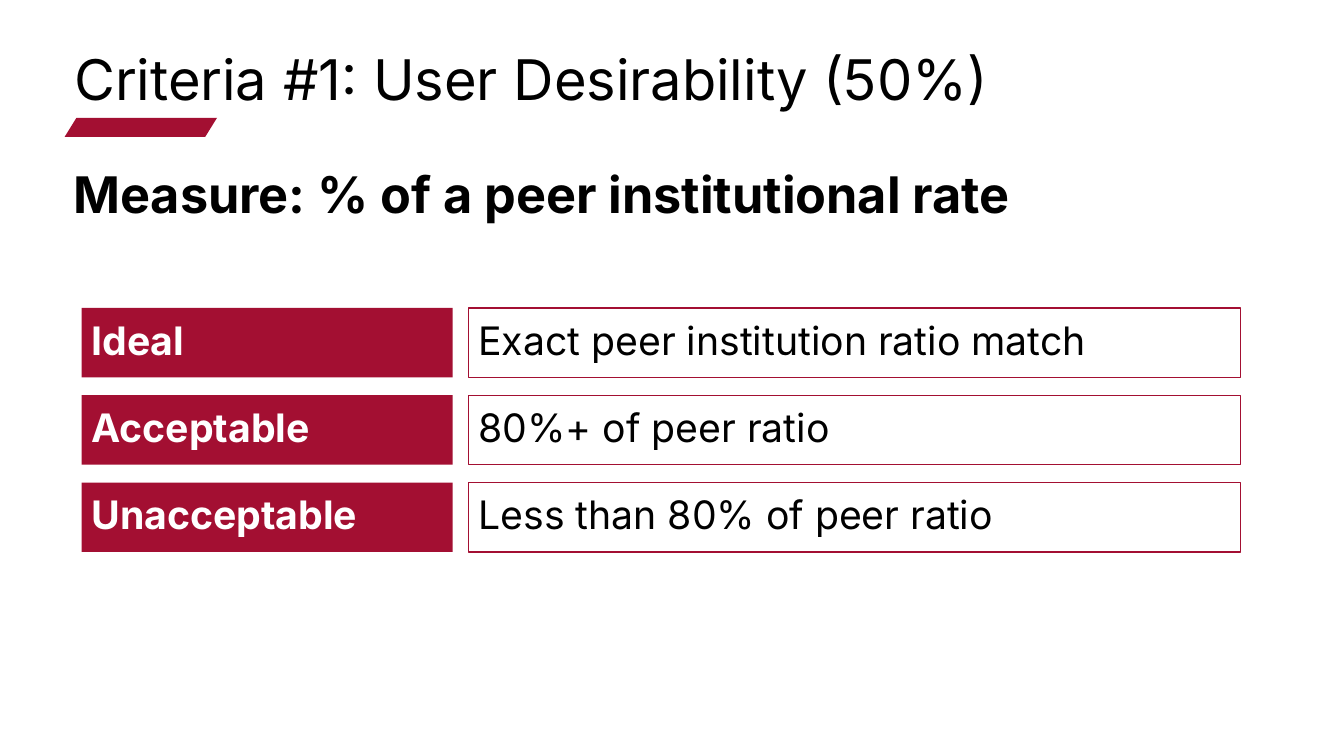
from typing import NamedTuple

from pptx import Presentation
from pptx.dml.color import RGBColor
from pptx.enum.shapes import MSO_SHAPE as Preset
from pptx.enum.text import MSO_ANCHOR as Anchor, PP_ALIGN as Align
from pptx.shapes.autoshape import Shape
from pptx.slide import Slide
from pptx.util import Cm, Pt

CRIMSON = RGBColor(0xA3, 0x0F, 0x32)
WHITE = RGBColor(0xFF, 0xFF, 0xFF)
BLACK = RGBColor(0x00, 0x00, 0x00)

FIRST_ROW_TOP = 7.76
ROW_PITCH = 2.2
ROW_HEIGHT = 1.75


class Heading(NamedTuple):
    text: str
    left: float
    top: float
    width: float
    height: float
    size: int
    bold: bool


class Column(NamedTuple):
    left: float
    width: float
    fill: RGBColor
    text_color: RGBColor
    bold: bool


class Rating(NamedTuple):
    level: str
    threshold: str


HEADINGS = [
    Heading("Criteria #1: User Desirability (50%)", 1.63, 1.19, 30.89, 1.4, 40, False),
    Heading("Measure: % of a peer institutional rate", 1.6, 4.17, 30.66, 1.0, 36, True),
]
LEVEL_COLUMN = Column(2.06, 9.35, CRIMSON, WHITE, True)
THRESHOLD_COLUMN = Column(11.81, 19.46, WHITE, BLACK, False)
RATINGS = [
    Rating("Ideal", "Exact peer institution ratio match"),
    Rating("Acceptable", "80%+ of peer ratio"),
    Rating("Unacceptable", "Less than 80% of peer ratio"),
]


def write(holder: Shape, text: str, size: int, color: RGBColor, bold: bool) -> None:
    frame = holder.text_frame
    frame.word_wrap = True
    line = frame.paragraphs[0]
    line.text = text
    line.alignment = Align.LEFT
    line.line_spacing = 0.9
    line.font.name = "Inter"
    line.font.size = Pt(size)
    line.font.bold = bold
    line.font.color.rgb = color


def add_heading(slide: Slide, heading: Heading) -> None:
    box = slide.shapes.add_textbox(
        Cm(heading.left), Cm(heading.top), Cm(heading.width), Cm(heading.height)
    )
    write(box, heading.text, heading.size, BLACK, heading.bold)


def add_accent(slide: Slide) -> None:
    """Draw the slanted bar under the title."""
    accent = slide.shapes.add_shape(
        Preset.PARALLELOGRAM, Cm(1.63), Cm(2.97), Cm(3.84), Cm(0.48)
    )
    accent.adjustments[0] = 0.62
    accent.shadow.inherit = False
    accent.fill.solid()
    accent.fill.fore_color.rgb = CRIMSON
    accent.line.fill.background()


def add_cell(slide: Slide, column: Column, row: int, text: str) -> None:
    cell = slide.shapes.add_shape(
        Preset.RECTANGLE,
        Cm(column.left),
        Cm(FIRST_ROW_TOP + row * ROW_PITCH),
        Cm(column.width),
        Cm(ROW_HEIGHT),
    )
    cell.shadow.inherit = False
    cell.fill.solid()
    cell.fill.fore_color.rgb = column.fill
    if column.fill == CRIMSON:
        cell.line.fill.background()
    else:
        cell.line.color.rgb = CRIMSON
        cell.line.width = Pt(1)
    cell.text_frame.vertical_anchor = Anchor.MIDDLE
    write(cell, text, 28, column.text_color, column.bold)


def main() -> None:
    deck = Presentation()
    deck.slide_width, deck.slide_height = Cm(33.87), Cm(19.05)
    slide = deck.slides.add_slide(deck.slide_layouts[6])
    add_accent(slide)
    for heading in HEADINGS:
        add_heading(slide, heading)
    for row, rating in enumerate(RATINGS):
        add_cell(slide, LEVEL_COLUMN, row, rating.level)
        add_cell(slide, THRESHOLD_COLUMN, row, rating.threshold)
    deck.save("out.pptx")


if __name__ == "__main__":
    main()
